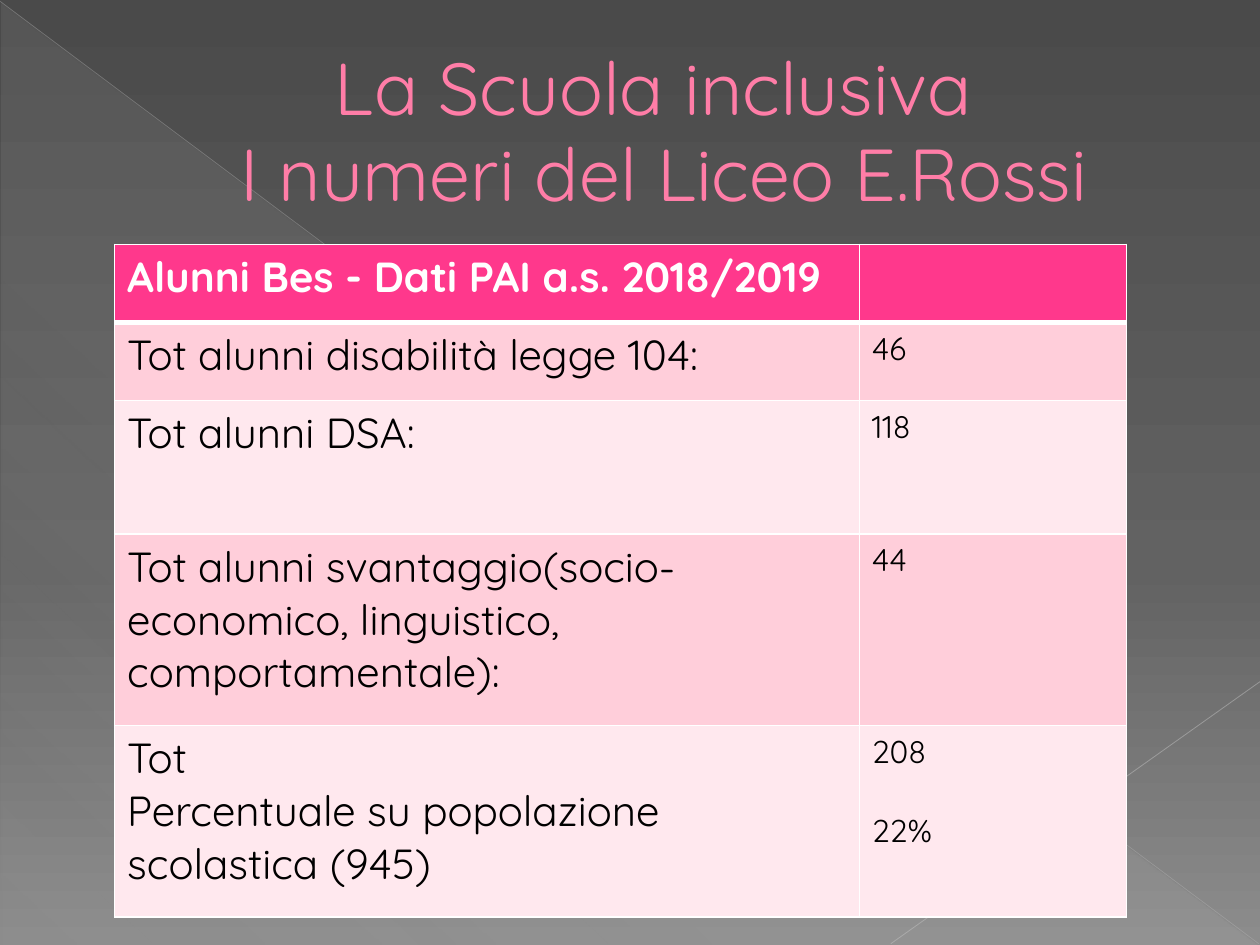
from dataclasses import dataclass
from lxml.etree import SubElement
from pptx import Presentation
from pptx.dml.color import RGBColor
from pptx.enum.shapes import MSO_CONNECTOR, MSO_SHAPE
from pptx.enum.text import MSO_ANCHOR, PP_ALIGN
from pptx.oxml import parse_xml
from pptx.oxml.ns import nsdecls, qn
from pptx.util import Inches, Pt


@dataclass(frozen=True)
class Theme:
    """Colours, font and type sizes of the slide."""
    font: str = "Quicksand"
    title: str = "FF7DA7"
    edge: str = "B12761"
    head: str = "FF388C"
    bands: tuple = ("FFCEDA", "FFE8EE")
    white: str = "FFFFFF"
    black: str = "000000"
    veil: str = "D2D2D2"
    back: tuple = ((0, "4A4A4A", 100), (60, "626262", 100), (100, "8C8C8C", 100))
    big: int = 42
    mid: int = 24
    small: int = 18


T = Theme()
ROWS = (
    ("Alunni Bes - Dati PAI a.s. 2018/2019", ""),
    ("Tot alunni disabilità legge 104:", "46"),
    ("Tot alunni DSA:", "118"),
    ("Tot alunni svantaggio(socio-economico, linguistico, comportamentale):", "44"),
    ("Tot\nPercentuale su popolazione scolastica (945)", "208\n22%"),
)
WIDTHS = (5.91, 2.12)
HEIGHTS = (0.62, 0.62, 1.06, 1.52, 1.52)


def put_text(frame, text, size=T.mid, color=T.black, bold=False, align=None, gap=0):
    """Fill a frame, one paragraph per line, with gap points between them."""
    for i, line in enumerate(text.split("\n")):
        para = frame.paragraphs[0] if i == 0 else frame.add_paragraph()
        para.text = line
        para.alignment = align
        para.space_before = Pt(gap if i else 0)
        para.font.size = Pt(size)
        for run in para.runs:
            run.font.name = T.font
            run.font.size = Pt(size)
            run.font.bold = bold
            run.font.color.rgb = RGBColor.from_string(color)


def solid(color, alpha=100):
    """Return solid fill XML."""
    return (f'<a:solidFill {nsdecls("a")}><a:srgbClr val="{color}">'
            f'<a:alpha val="{alpha * 1000}"/></a:srgbClr></a:solidFill>')


def blend(stops, angle):
    """Return a linear gradient element."""
    marks = "".join(
        f'<a:gs pos="{pos * 1000}"><a:srgbClr val="{color}">'
        f'<a:alpha val="{alpha * 1000}"/></a:srgbClr></a:gs>'
        for pos, color, alpha in stops)
    return parse_xml(f'<a:gradFill {nsdecls("a")} rotWithShape="1"><a:gsLst>{marks}'
                     f'</a:gsLst><a:lin ang="{angle * 60000}" scaled="0"/></a:gradFill>')


def add_back(slide):
    """Paint the slide background with a gradient."""
    fill = slide.background.fill
    fill.solid()
    props = slide.element.find(".//" + qn("p:bgPr"))
    props.replace(props[0], blend(T.back, 90))


def add_veil(slide):
    """Add the pale triangle behind the content."""
    shape = slide.shapes.add_shape(MSO_SHAPE.RIGHT_TRIANGLE, Inches(0.01),
                                   Inches(0.02), Inches(9.98), Inches(7.48))
    shape.shadow.inherit = False
    shape.line.fill.background()
    shape.fill.solid()
    props = shape.element.spPr
    stops = [(pos, T.veil, alpha) for pos, alpha in ((0, 10), (70, 8), (100, 1))]
    props.replace(props.find(qn("a:solidFill")), blend(stops, 133))


def add_line(slide, start, end, color, width, alpha):
    """Add a thin translucent line."""
    line = slide.shapes.add_connector(MSO_CONNECTOR.STRAIGHT,
                                      *map(Inches, start + end))
    line.line.width = Pt(width)
    line.line.fill.solid()
    stroke = line.line.fill._xPr
    stroke.replace(stroke[0], parse_xml(solid(color, alpha)))
    SubElement(line._element.spPr, qn("a:effectLst"))


def add_title(slide):
    """Place and format the title above the backdrop."""
    title = slide.shapes.title
    title.left, title.top = Inches(0.5), Inches(0.29)
    title.width, title.height = Inches(9), Inches(1.53)
    frame = title.text_frame
    frame.word_wrap = True
    frame.vertical_anchor = MSO_ANCHOR.MIDDLE
    put_text(frame, "La Scuola inclusiva \vI numeri del Liceo E.Rossi",
             size=T.big, color=T.title, align=PP_ALIGN.CENTER)
    para = frame.paragraphs[0]
    para.line_spacing = 0.97
    props = para._p.get_or_add_pPr()
    props.set("marL", str(Inches(0.53)))
    props.set("indent", "0")
    for run in para.runs:
        run._r.get_or_add_rPr().insert(0, parse_xml(
            f'<a:ln {nsdecls("a")} w="{Pt(0.5)}">{solid(T.edge)}</a:ln>'))
    slide.shapes._spTree.append(title._element)


def set_edge(cell, base):
    """Draw white borders, with base points at the bottom."""
    props = cell._tc.get_or_add_tcPr()
    sides = (("L", 1), ("R", 1), ("T", 1), ("B", base))
    for i, (side, width) in enumerate(sides):
        props.insert(i, parse_xml(f'<a:ln{side} {nsdecls("a")} w="{Pt(width)}">'
                                  f'{solid(T.white)}</a:ln{side}>'))


def add_grid(slide):
    """Add the table of pupil numbers."""
    table = slide.shapes.add_table(len(ROWS), len(WIDTHS), Inches(0.91), Inches(1.94),
                                   Inches(sum(WIDTHS)), Inches(sum(HEIGHTS))).table
    for col, width in zip(table.columns, WIDTHS):
        col.width = Inches(width)
    for r, (row, height) in enumerate(zip(ROWS, HEIGHTS)):
        table.rows[r].height = Inches(height)
        head = r == 0
        color = T.head if head else T.bands[(r - 1) % 2]
        for c, text in enumerate(row):
            cell = table.cell(r, c)
            cell.fill.solid()
            cell.fill.fore_color.rgb = RGBColor.from_string(color)
            set_edge(cell, 3 if head else 1)
            put_text(cell.text_frame, text, bold=head,
                     size=T.small if c else T.mid,
                     color=T.white if head else T.black,
                     gap=22.5 if c else 0)


def main():
    """Build and save the slide."""
    deck = Presentation()
    deck.slide_width, deck.slide_height = Inches(10), Inches(7.5)
    slide = deck.slides.add_slide(deck.slide_layouts[5])
    add_back(slide)
    add_veil(slide)
    add_line(slide, (0, 0.01), (9.99, 7.49), "BFBFBF", 0.39, 35)
    add_line(slide, (10, 5.41), (7.07, 7.49), "C6C6C6", 0.47, 45)
    add_title(slide)
    add_grid(slide)
    deck.save("out.pptx")


if __name__ == "__main__":
    main()
